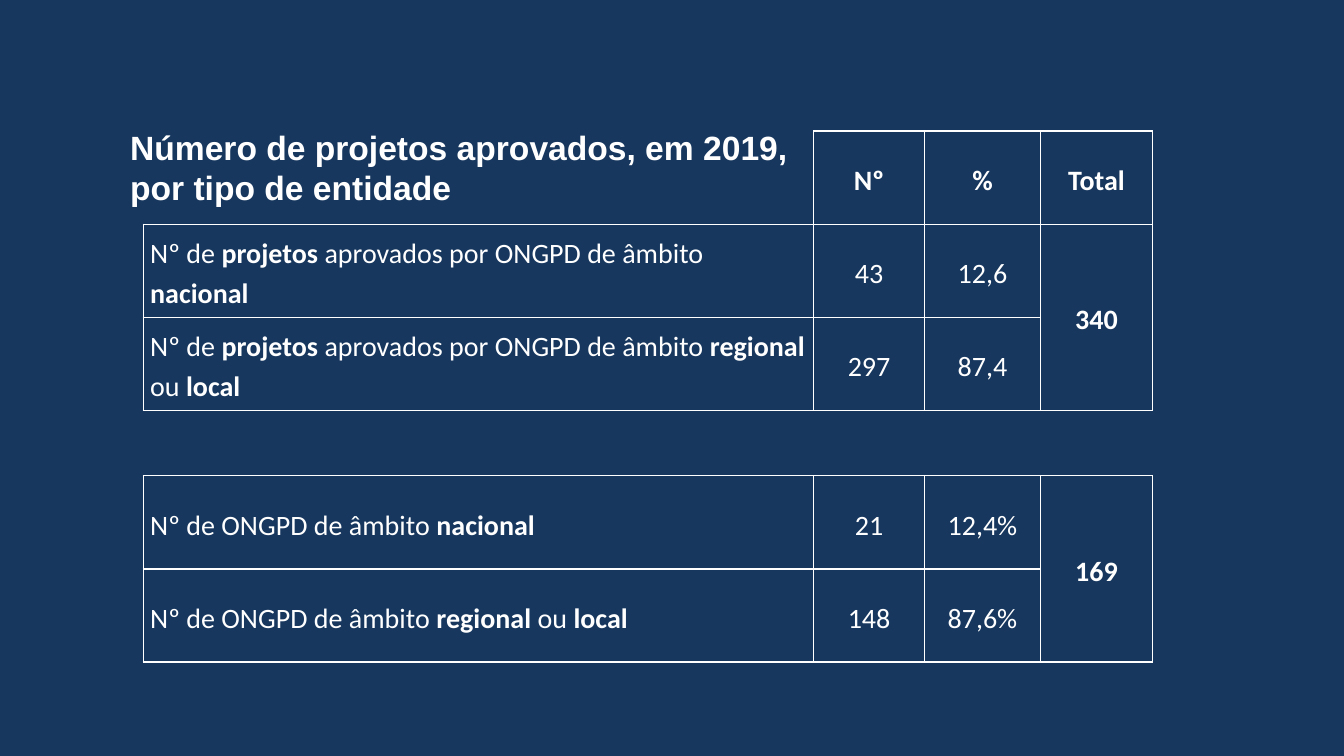
from lxml.etree import SubElement
from pptx import Presentation
from pptx.dml.color import RGBColor
from pptx.enum.text import MSO_ANCHOR as Anchor, MSO_AUTO_SIZE as AutoSize, PP_ALIGN as Align
from pptx.oxml.ns import qn
from pptx.util import Inches, Pt

NAVY, WHITE = "17375E", "FFFFFF"
NO_STYLE = "{2D5ABB26-0587-4C30-8999-92F81FD0307C}"
COLUMNS = (6.65, 1.10, 1.15, 1.11)
SPACER_ROW, SPACER_HEIGHT = 3, 0.65
# Bold words stand between double asterisks.
ROWS = (
    ("", "**Nº**", "**%**", "**Total**"),
    ("Nº de **projetos **aprovados por ONGPD de âmbito **nacional**", "43", "12,6", "**340**"),
    ("Nº de **projetos **aprovados por ONGPD de âmbito **regional** ou **local**", "297", "87,4", ""),
    ("", "", "", ""),
    ("Nº de ONGPD de âmbito **nacional**", "21", "12,4%", "**169**"),
    ("Nº de ONGPD de âmbito **regional** ou **local**", "148", "87,6%", ""),
)


def color(value):
    return RGBColor.from_string(value)


def write(frame, text, font="Calibri", size=20, align=Align.LEFT, spacing=None, after=0,
          anchor=Anchor.MIDDLE):
    """Fill a text frame, one paragraph a line, with **bold** parts."""
    frame.word_wrap = True
    frame.vertical_anchor = anchor
    for index, line in enumerate(text.split("\n")):
        paragraph = frame.add_paragraph() if index else frame.paragraphs[0]
        paragraph.alignment = align
        paragraph.line_spacing = spacing
        paragraph.space_after = Pt(after)
        for part_index, part in enumerate(line.split("**")):
            if part:
                run = paragraph.add_run()
                run.text = part
                run.font.name = font
                run.font.size = Pt(size)
                run.font.bold = part_index % 2 == 1
                run.font.color.rgb = color(WHITE)


def set_borders(cell, sides):
    properties = cell._tc.get_or_add_tcPr()
    for side in sides:
        line = SubElement(properties, qn(f"a:ln{side}"), w=str(Pt(1)))
        fill = SubElement(line, qn("a:solidFill"))
        SubElement(fill, qn("a:srgbClr"), val=WHITE)


def border_sides(row, column):
    if row == SPACER_ROW:
        return "TB"
    return "RB" if row == column == 0 else "LRTB"


def add_title(slide, left, top, width, height):
    title = slide.shapes.title
    title.left, title.top = Inches(left), Inches(top)
    title.width, title.height = Inches(width), Inches(height)
    frame = title.text_frame
    frame.auto_size = AutoSize.NONE
    frame.margin_left = frame.margin_right = frame.margin_top = frame.margin_bottom = 0
    write(frame, "**Número de projetos aprovados, em 2019,**\n**por tipo de entidade**",
          font="Arial", size=24, anchor=Anchor.TOP)


def add_projects_table(slide, left, top, height):
    shape = slide.shapes.add_table(len(ROWS), len(COLUMNS), Inches(left), Inches(top),
                                   Inches(sum(COLUMNS)), Inches(height))
    table = shape.table
    table.first_row = table.horz_banding = False
    table._tbl.tblPr.find(qn("a:tableStyleId")).text = NO_STYLE
    for column, width in zip(table.columns, COLUMNS):
        column.width = Inches(width)
    row_height = (height - SPACER_HEIGHT) / (len(ROWS) - 1)
    for row_index, texts in enumerate(ROWS):
        table.rows[row_index].height = Inches(
            SPACER_HEIGHT if row_index == SPACER_ROW else row_height)
        for column_index, text in enumerate(texts):
            cell = table.cell(row_index, column_index)
            set_borders(cell, border_sides(row_index, column_index))
            cell.fill.background()
            cell.margin_left = cell.margin_right = Inches(0.07)
            cell.margin_top, cell.margin_bottom = Inches(0.01), 0
            cell.vertical_anchor = Anchor.MIDDLE
            if text:
                write(cell.text_frame, text, spacing=1.15, after=10,
                      align=Align.CENTER if column_index else Align.LEFT)
    for first_row in (1, SPACER_ROW + 1):
        table.cell(first_row, 3).merge(table.cell(first_row + 1, 3))
    table.cell(SPACER_ROW, 0).merge(table.cell(SPACER_ROW, 1))


def main():
    presentation = Presentation()
    presentation.slide_width, presentation.slide_height = Inches(13.33), Inches(7.5)
    slide = presentation.slides.add_slide(presentation.slide_layouts[5])
    slide.background.fill.solid()
    slide.background.fill.fore_color.rgb = color(NAVY)
    add_title(slide, 1.29, 1.26, 6.75, 0.85)
    add_projects_table(slide, 1.42, 1.3, 5.27)
    presentation.save("out.pptx")


if __name__ == "__main__":
    main()
